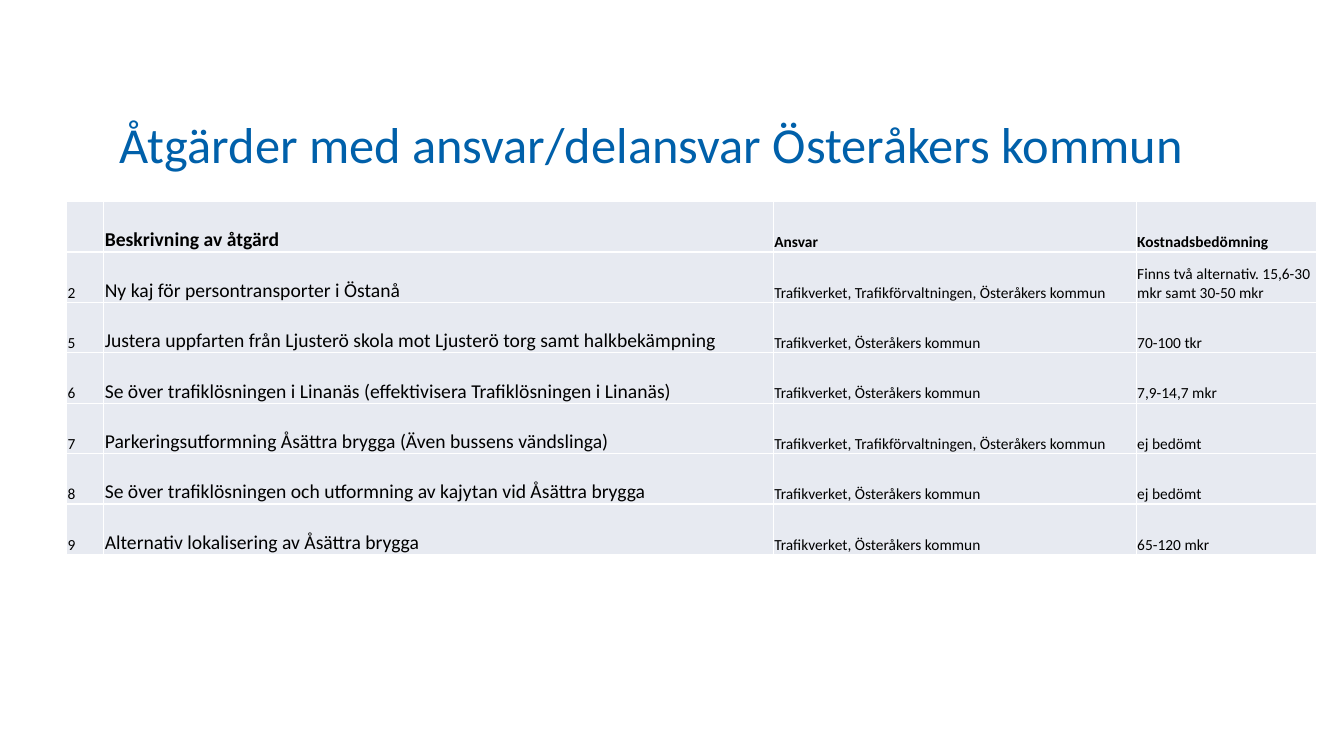
"""Build a slide listing the measures Österåkers kommun is responsible for."""
from pptx import Presentation
from pptx.dml.color import RGBColor
from pptx.enum import text
from pptx.util import Inches, Pt

HEADING = "Åtgärder med ansvar/delansvar Österåkers kommun"
SHARED = "Trafikverket, Österåkers kommun"
SHARED_BY_THREE = "Trafikverket, Trafikförvaltningen, Österåkers kommun"
MEASURES = [
    ("", "Beskrivning av åtgärd", "Ansvar", "Kostnadsbedömning"),
    ("2", "Ny kaj för persontransporter i Östanå", SHARED_BY_THREE,
     "Finns två alternativ. 15,6-30 mkr samt 30-50 mkr"),
    ("5", "Justera uppfarten från Ljusterö skola mot Ljusterö torg samt halkbekämpning",
     SHARED, "70-100 tkr"),
    ("6", "Se över trafiklösningen i Linanäs (effektivisera Trafiklösningen i Linanäs)",
     SHARED, "7,9-14,7 mkr"),
    ("7", "Parkeringsutformning Åsättra brygga (Även bussens vändslinga)",
     SHARED_BY_THREE, "ej bedömt"),
    ("8", "Se över trafiklösningen och utformning av kajytan vid Åsättra brygga",
     SHARED, "ej bedömt"),
    ("9", "Alternativ lokalisering av Åsättra brygga", SHARED, "65-120 mkr"),
]
COLUMN_WIDTHS = (0.37, 6.64, 3.6, 1.79)
COLUMN_SIZES = (11, 14, 11, 11)
ROW_HEIGHT = 0.5

FONT = "Calibri"
BLUE = RGBColor(0x00, 0x60, 0xAA)
BLACK = RGBColor(0x00, 0x00, 0x00)
PALE = RGBColor(0xE7, 0xEA, 0xF1)


def style(paragraph, size, color, bold=False):
    """Format the font of a paragraph and its runs."""
    for part in (paragraph, *paragraph.runs):
        part.font.name = FONT
        part.font.size = Pt(size)
        part.font.color.rgb = color
        part.font.bold = bold


def add_heading(slide):
    """Place and format the slide title."""
    title = slide.shapes.title
    title.left, title.top = Inches(1.19), Inches(0.52)
    title.width, title.height = Inches(10.81), Inches(1.21)
    frame = title.text_frame
    frame.text = HEADING
    frame.word_wrap = True
    frame.auto_size = text.MSO_AUTO_SIZE.NONE
    frame.vertical_anchor = text.MSO_ANCHOR.BOTTOM
    frame.margin_left = frame.margin_right = frame.margin_top = frame.margin_bottom = 0
    heading = frame.paragraphs[0]
    heading.alignment = text.PP_ALIGN.LEFT
    heading.line_spacing = 0.9
    style(heading, 36, BLUE)


def add_measures(slide):
    """Add the table of measures."""
    table = slide.shapes.add_table(
        len(MEASURES), len(COLUMN_WIDTHS), Inches(0.66), Inches(2),
        Inches(sum(COLUMN_WIDTHS)), Inches(ROW_HEIGHT * len(MEASURES))).table
    table.first_row = table.horz_banding = False
    for column, width in zip(table.columns, COLUMN_WIDTHS):
        column.width = Inches(width)
    for row, measure in enumerate(MEASURES):
        table.rows[row].height = Inches(ROW_HEIGHT)
        for col, (entry, size) in enumerate(zip(measure, COLUMN_SIZES)):
            cell = table.cell(row, col)
            cell.fill.solid()
            cell.fill.fore_color.rgb = PALE
            cell.vertical_anchor = text.MSO_ANCHOR.BOTTOM
            cell.margin_left = cell.margin_right = cell.margin_top = Inches(0.01)
            cell.margin_bottom = 0
            cell.text_frame.text = entry
            style(cell.text_frame.paragraphs[0], size, BLACK, bold=row == 0)


def main():
    """Create and save the presentation."""
    deck = Presentation()
    deck.slide_width, deck.slide_height = Inches(13.33), Inches(7.5)
    slide = deck.slides.add_slide(deck.slide_layouts[5])
    add_heading(slide)
    add_measures(slide)
    deck.save("out.pptx")


if __name__ == "__main__":
    main()
